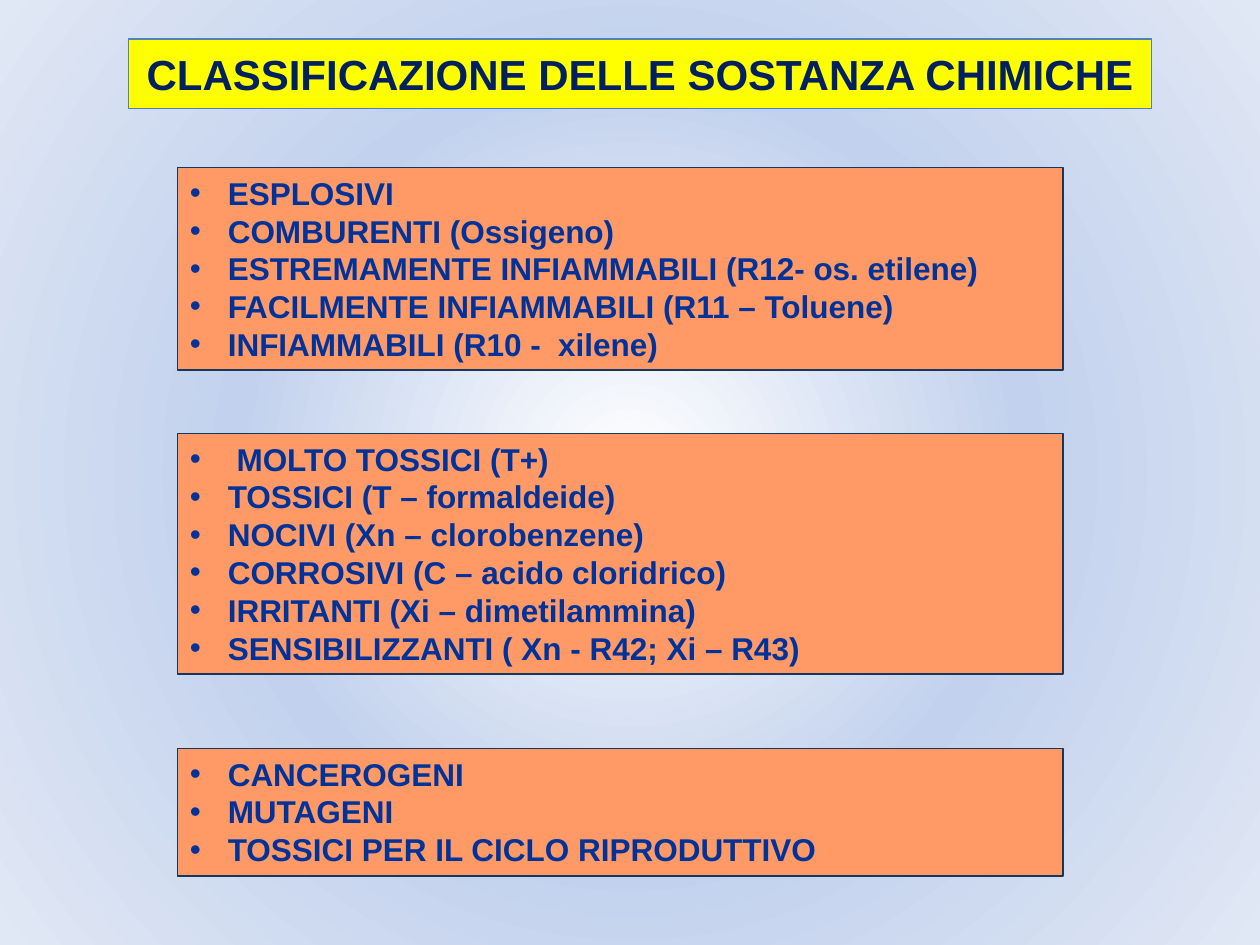
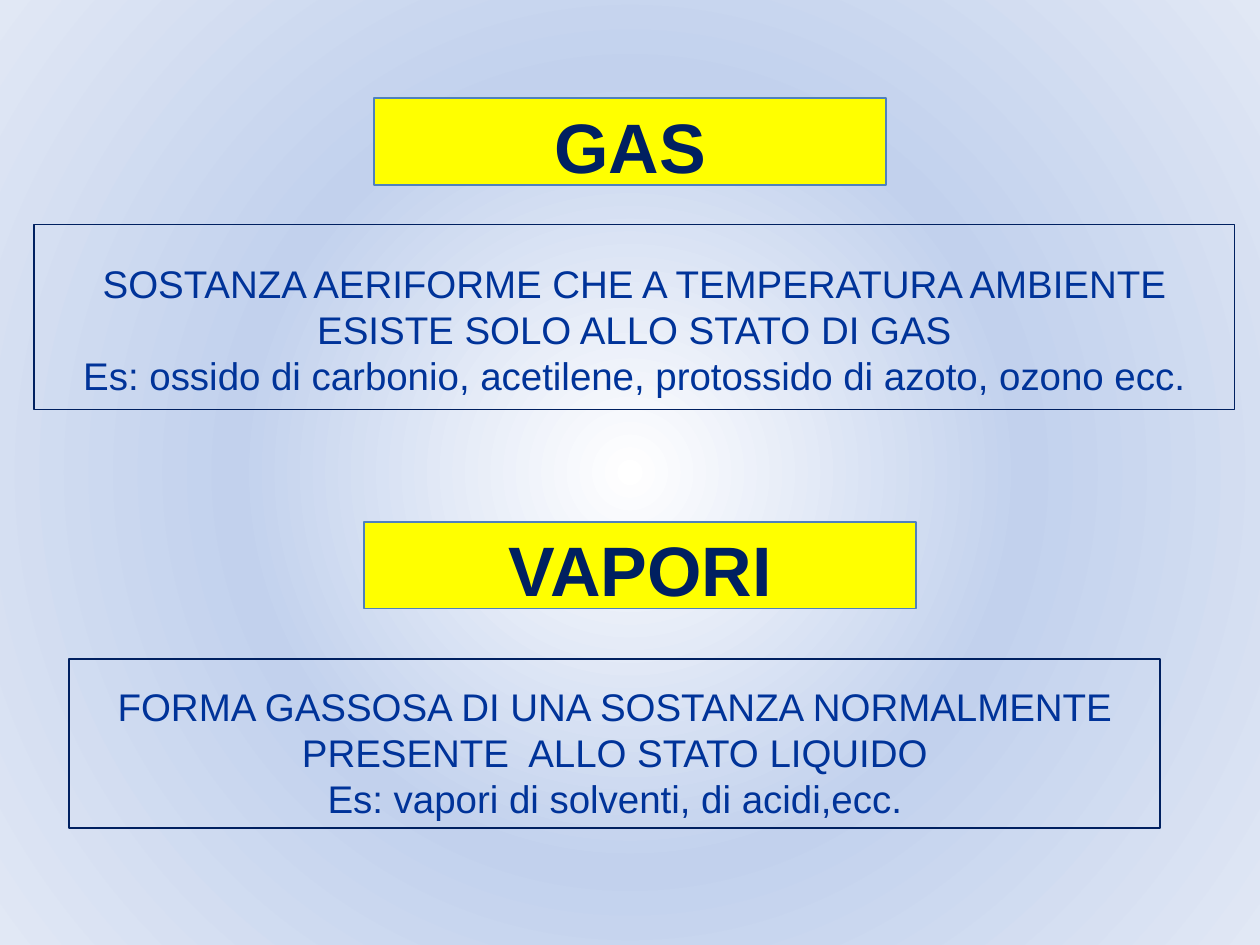
from dataclasses import dataclass

from pptx import Presentation
from pptx.dml.color import RGBColor
from pptx.enum.shapes import MSO_SHAPE as Shape
from pptx.enum.text import MSO_ANCHOR as Anchor, MSO_AUTO_SIZE as AutoSize, PP_ALIGN as Align
from pptx.oxml import parse_xml
from pptx.oxml.ns import nsdecls, qn
from pptx.util import Inches, Pt

HAZARDS_TITLE = "CLASSIFICAZIONE DELLE SOSTANZA CHIMICHE"
HAZARD_GROUPS = [
    (1.33, 1.61, [
        "ESPLOSIVI",
        "COMBURENTI (Ossigeno)",
        "ESTREMAMENTE INFIAMMABILI (R12- os. etilene)",
        "FACILMENTE INFIAMMABILI (R11 – Toluene)",
        "INFIAMMABILI (R10 -  xilene)",
    ]),
    (3.44, 1.91, [
        " MOLTO TOSSICI (T+)",
        "TOSSICI (T – formaldeide)",
        "NOCIVI (Xn – clorobenzene)",
        "CORROSIVI (C – acido cloridrico)",
        "IRRITANTI (Xi – dimetilammina)",
        "SENSIBILIZZANTI ( Xn - R42; Xi – R43)",
    ]),
    (5.94, 1.01, [
        "CANCEROGENI",
        "MUTAGENI",
        "TOSSICI PER IL CICLO RIPRODUTTIVO",
    ]),
]
STATES = [
    {"name": "GAS", "name_at": (2.97, 0.78, 4.06, 0.69),
     "text_at": (0.27, 1.78, 9.53, 1.47), "border": 0.75, "foot": 0.09,
     "text": ["SOSTANZA AERIFORME CHE A TEMPERATURA AMBIENTE ESISTE SOLO ALLO STATO DI GAS",
              "Es: ossido di carbonio, acetilene, protossido di azoto, ozono ecc."]},
    {"name": "VAPORI", "name_at": (2.89, 4.14, 4.38, 0.69),
     "text_at": (0.55, 5.23, 8.66, 1.34), "border": 1, "foot": 0.05,
     "text": ["FORMA GASSOSA DI UNA SOSTANZA NORMALMENTE PRESENTE  ALLO STATO LIQUIDO",
              "Es: vapori di solventi, di acidi,ecc."]},
]


@dataclass(frozen=True)
class Theme:
    """Colours, type sizes and common measures."""
    font: str = "Arial"
    navy: str = "002060"
    blue: str = "003399"
    yellow: str = "FFFF00"
    yellow_edge: str = "4F81BD"
    orange: str = "FF9966"
    orange_edge: str = "17375E"
    glow: tuple = ((0, "FFFFFF", 35), (50, "C2D1ED", 100), (100, "E1E8F5", 100))
    title: int = 24
    name: int = 40
    item: int = 18
    text: int = 22
    group_left: float = 1.41
    group_width: float = 7.03
    bullet_indent: float = 0.3


THEME = Theme()


def apply(target, values):
    """Set every attribute of target named in values."""
    for key, value in values.items():
        setattr(target, key, value)


def paint_background(master):
    """Give the master a radial gradient that all slides inherit."""
    fill = master.background.fill
    fill.solid()
    stops = "".join(
        f'<a:gs pos="{pos * 1000}"><a:srgbClr val="{color}">'
        f'<a:alpha val="{alpha * 1000}"/></a:srgbClr></a:gs>'
        for pos, color, alpha in THEME.glow)
    gradient = parse_xml(
        f'<a:gradFill {nsdecls("a")} rotWithShape="1"><a:gsLst>{stops}</a:gsLst>'
        '<a:path path="circle"><a:fillToRect l="50000" t="50000" r="50000" b="50000"/>'
        '</a:path></a:gradFill>')
    solid = next(master.element.iter(qn("a:solidFill")))
    solid.getparent().replace(solid, gradient)


def add_bullet(para):
    """Hang the paragraph on a round bullet."""
    props = para._p.get_or_add_pPr()
    indent = Inches(THEME.bullet_indent)
    props.set("marL", str(indent))
    props.set("indent", str(-indent))
    props.append(parse_xml(f'<a:buFont {nsdecls("a")} typeface="Arial"/>'))
    props.append(parse_xml(f'<a:buChar {nsdecls("a")} char="•"/>'))


def fill_box(box, at, lines, size, color, edge, fill=None, bold=True, border=1.0,
             align=Align.CENTER, anchor=Anchor.MIDDLE, insets=(0.05, 0.05), bullets=False):
    """Place a box, format its frame and write its lines."""
    apply(box, dict(zip(("left", "top", "width", "height"), map(Inches, at))))
    if fill:
        box.fill.solid()
        box.fill.fore_color.rgb = RGBColor.from_string(fill)
    else:
        box.fill.background()
    box.line.color.rgb = RGBColor.from_string(edge)
    box.line.width = Pt(border)
    frame = box.text_frame
    apply(frame, {
        "word_wrap": True, "auto_size": AutoSize.NONE, "vertical_anchor": anchor,
        "margin_left": Inches(0.1), "margin_right": Inches(0.1),
        "margin_top": Inches(insets[0]), "margin_bottom": Inches(insets[1])})
    for index, line in enumerate(lines):
        para = frame.add_paragraph() if index else frame.paragraphs[0]
        para.alignment = align
        if bullets:
            add_bullet(para)
        span = para.add_run()
        span.text = line
        apply(span.font, {"name": THEME.font, "size": Pt(size), "bold": bold})
        span.font.color.rgb = RGBColor.from_string(color)


def add_box(page, *args, **formats):
    """Add a flat rectangle and fill it."""
    box = page.shapes.add_shape(Shape.RECTANGLE, 0, 0, 0, 0)
    box.shadow.inherit = False
    fill_box(box, *args, **formats)


def build_hazards(page):
    """Show the title and the groups of hazardous substances."""
    fill_box(page.shapes.title, (1.02, 0.31, 8.12, 0.55), [HAZARDS_TITLE], THEME.title,
             THEME.navy, THEME.yellow_edge, fill=THEME.yellow, border=0.75)
    for top, height, items in HAZARD_GROUPS:
        add_box(page, (THEME.group_left, top, THEME.group_width, height), items, THEME.item,
                THEME.blue, THEME.orange_edge, fill=THEME.orange,
                align=Align.LEFT, anchor=Anchor.TOP, bullets=True)


def build_states(page):
    """Show each state of matter with its definition."""
    for index, state in enumerate(STATES):
        label = (state["name_at"], [state["name"]], THEME.name, THEME.navy, THEME.yellow_edge)
        look = {"fill": THEME.yellow, "insets": (0.06, 0)}
        if index:
            add_box(page, *label, **look)
        else:
            fill_box(page.shapes.title, *label, **look)
        add_box(page, state["text_at"], state["text"], THEME.text, THEME.blue, THEME.navy,
                bold=False, border=state["border"], anchor=Anchor.BOTTOM,
                insets=(0.05, state["foot"]))


def main():
    """Build the deck and save it."""
    deck = Presentation()
    apply(deck, {"slide_width": Inches(10), "slide_height": Inches(7.5)})
    paint_background(deck.slide_master)
    for build in (build_hazards, build_states):
        build(deck.slides.add_slide(deck.slide_layouts[5]))
    deck.save("out.pptx")


if __name__ == "__main__":
    main()
